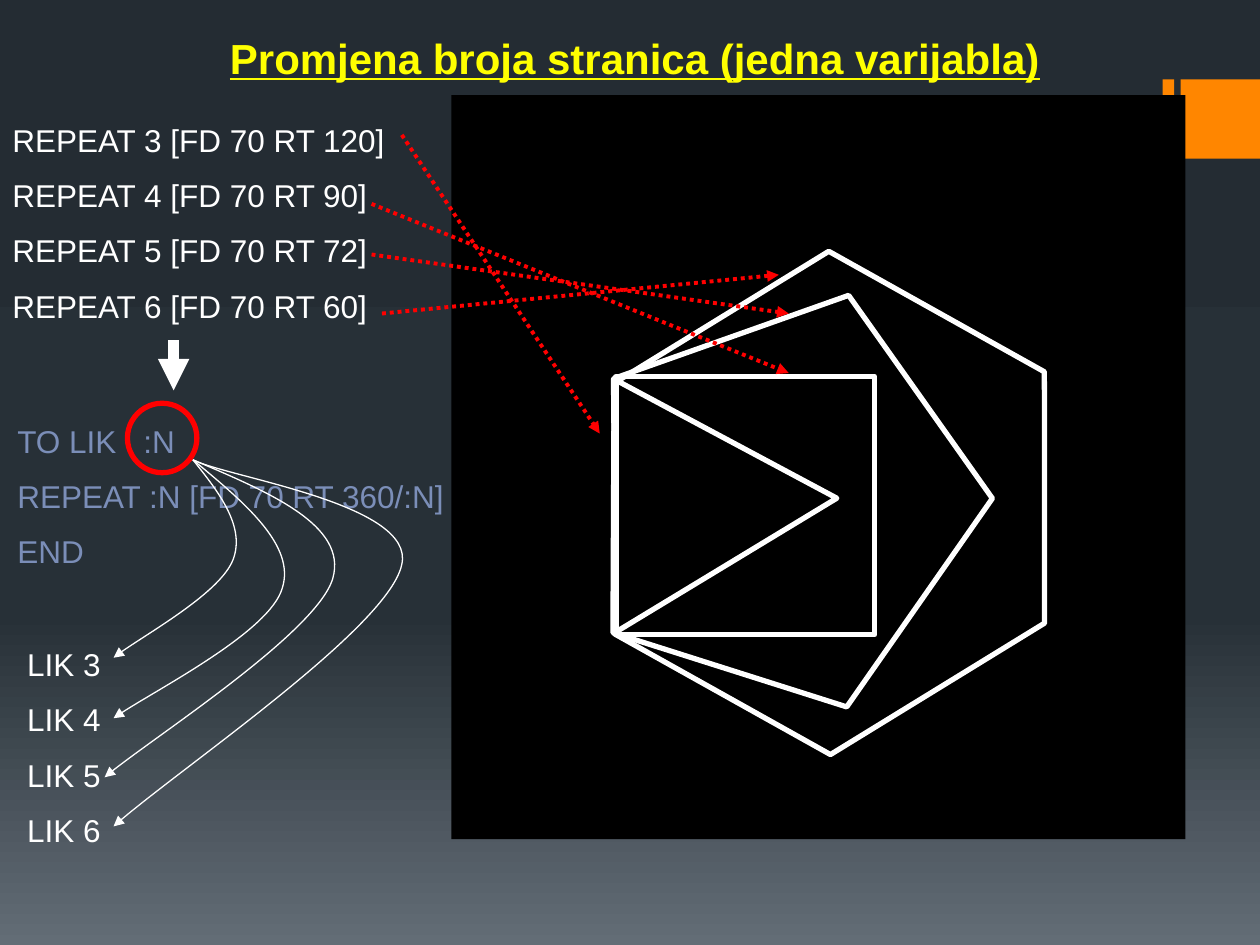
from copy import deepcopy
from dataclasses import dataclass

from lxml import etree
from pptx import Presentation
from pptx.dml.color import RGBColor
from pptx.enum.dml import MSO_LINE
from pptx.enum.shapes import MSO_CONNECTOR, MSO_SHAPE
from pptx.enum.text import MSO_AUTO_SIZE, PP_ALIGN
from pptx.oxml.ns import qn
from pptx.util import Cm, Pt

RECTANGLE = MSO_SHAPE.RECTANGLE
HEXAGON = MSO_SHAPE.HEXAGON
PENTAGON = MSO_SHAPE.REGULAR_PENTAGON
TRIANGLE = MSO_SHAPE.ISOSCELES_TRIANGLE
OVAL = MSO_SHAPE.OVAL
STRAIGHT = MSO_CONNECTOR.STRAIGHT
DOTTED = MSO_LINE.ROUND_DOT
CENTER = PP_ALIGN.CENTER
FIT_SHAPE = MSO_AUTO_SIZE.SHAPE_TO_FIT_TEXT


@dataclass(frozen=True)
class Theme:
    font: str = "Arial"
    title_size: int = 24
    code_size: int = 18
    gap: int = 10
    white: str = "FFFFFF"
    black: str = "000000"
    red: str = "FF0000"
    yellow: str = "FFFF00"
    orange: str = "FF8600"
    blue: str = "7B8EB8"
    background: tuple = ((0, "242C33"), (0.65, "273037"), (1, "636D76"))


THEME = Theme()


def color(value):
    return RGBColor.from_string(value)


def paint_background(page):
    fill = page.background.fill
    fill.gradient()
    fill.gradient_angle = 270
    stop_list = page._element.find(".//" + qn("a:gsLst"))
    stop_list.append(deepcopy(stop_list[-1]))
    for stop, (position, value) in zip(fill.gradient_stops, THEME.background):
        stop.position = position
        stop.color.rgb = color(value)


def style_line(line, value, width):
    line.color.rgb = color(value)
    line.width = Pt(width)


def add_arrowhead(shape):
    outline = shape.line._get_or_add_ln()
    etree.SubElement(outline, qn("a:tailEnd"), type="triangle")


def add_block(page, left, top, width, height, value):
    block = page.shapes.add_shape(RECTANGLE, Cm(left), Cm(top), Cm(width), Cm(height))
    block.shadow.inherit = False
    block.fill.solid()
    block.fill.fore_color.rgb = color(value)
    block.line.fill.background()


def add_outline(page, kind, left, top, width, height, value, rotation=0):
    shape = page.shapes.add_shape(kind, Cm(left), Cm(top), Cm(width), Cm(height))
    shape.shadow.inherit = False
    shape.fill.background()
    style_line(shape.line, value, 3)
    shape.rotation = rotation
    return shape


def add_text(page, left, top, width, height, lines, value, size=THEME.code_size,
             title=False, tab=None):
    box = page.shapes.add_textbox(Cm(left), Cm(top), Cm(width), Cm(height))
    frame = box.text_frame
    frame.word_wrap = True
    frame.auto_size = FIT_SHAPE
    for index, line in enumerate(lines):
        para = frame.add_paragraph() if index else frame.paragraphs[0]
        para.space_before = Pt(THEME.gap)
        if title:
            para.alignment = CENTER
        if tab and "\t" in line:
            tabs = etree.SubElement(para._p.get_or_add_pPr(), qn("a:tabLst"))
            etree.SubElement(tabs, qn("a:tab"), pos=str(Cm(tab)), algn="l")
        span = para.add_run()
        span.text = line
        span.font.name = THEME.font
        span.font.size = Pt(size)
        span.font.color.rgb = color(value)
        span.font.bold = title
        span.font.underline = title


def add_arrow(page, start, end, value, width, dash=None):
    points = [Cm(number) for number in (*start, *end)]
    arrow = page.shapes.add_connector(STRAIGHT, *points)
    style_line(arrow.line, value, width)
    if dash:
        arrow.line.dash_style = dash
    add_arrowhead(arrow)
    etree.SubElement(arrow._element.spPr, qn("a:effectLst"))


def add_curve(page, start, points):
    """Draw Bezier segments; every three points make one segment."""
    builder = page.shapes.build_freeform(Cm(start[0]), Cm(start[1]))
    builder.add_line_segments([(Cm(x), Cm(y)) for x, y in points], close=False)
    curve = builder.convert_to_shape()
    curve.shadow.inherit = False
    curve.fill.background()
    style_line(curve.line, THEME.white, 0.75)
    add_arrowhead(curve)
    outline = curve._element.find(".//" + qn("a:path"))
    segments = outline.findall(qn("a:lnTo"))
    for first in range(0, len(segments), 3):
        bezier = etree.SubElement(outline, qn("a:cubicBezTo"))
        for segment in segments[first:first + 3]:
            bezier.append(segment[0])
            outline.remove(segment)


def main():
    deck = Presentation()
    deck.slide_width, deck.slide_height = Cm(25.4), Cm(19.05)
    page = deck.slides.add_slide(deck.slide_layouts[6])
    paint_background(page)

    # Corner decoration and drawing panel
    add_block(page, 23.44, 1.6, 0.23, 1.6, THEME.orange)
    add_block(page, 23.8, 1.6, 1.6, 1.6, THEME.orange)
    add_block(page, 9.1, 1.92, 14.8, 15, THEME.black)

    # Nested polygons
    hexagon = add_outline(page, HEXAGON, 11.76, 5.72, 9.93, 8.84, THEME.white, 29.2)
    hexagon.adjustments[0] = 0.28
    add_outline(page, PENTAGON, 11.91, 5.77, 8, 7.92, THEME.white, 17.6)
    add_outline(page, RECTANGLE, 12.42, 7.59, 5.21, 5.21, THEME.white)
    add_outline(page, TRIANGLE, 10.9, 7.32, 5.21, 4.39, THEME.white, 328.8)

    # Procedure, commands and calls
    add_text(page, 0.1, 8.38, 9.2, 3.3,
             ["TO LIK\t:N", "REPEAT :N [FD 70 RT 360/:N]", "END"],
             THEME.blue, tab=2.54)
    sides = range(3, 7)
    add_text(page, 0, 2.31, 9.5, 4.47,
             [f"REPEAT {count} [FD 70 RT {360 // count}]" for count in sides],
             THEME.white)
    add_text(page, 0.3, 12.88, 3.3, 4.47,
             [f"LIK {count}" for count in sides], THEME.white)

    # Arrows from each command to its polygon
    for start, end in (
        ((8.1, 2.72), (12.09, 8.74)),
        ((7.49, 4.11), (15.9, 7.52)),
        ((7.49, 5.13), (15.9, 6.32)),
        ((7.7, 6.32), (15.7, 5.54)),
    ):
        add_arrow(page, start, end, THEME.red, 2.25, DOTTED)
    add_arrow(page, (3.5, 6.86), (3.5, 7.87), THEME.white, 6)

    # Marked variable and curves to the calls
    add_outline(page, OVAL, 2.57, 8.13, 1.4, 1.4, THEME.red)
    for points in (
        ((4.42, 9.93), (4.95, 10.62), (4.7, 11.28),
         (4.45, 11.94), (2.69, 12.93), (2.29, 13.26)),
        ((4.93, 10.13), (5.97, 11), (5.69, 11.86),
         (5.44, 12.73), (2.87, 14.05), (2.29, 14.48)),
        ((5.44, 9.93), (7.01, 10.59), (6.71, 11.66),
         (6.4, 12.73), (2.87, 15.01), (2.11, 15.67)),
        ((4.6, 9.63), (8.38, 10.16), (8.1, 11.38),
         (7.85, 12.62), (3.51, 15.57), (2.29, 16.66)),
    ):
        add_curve(page, (3.89, 9.27), points)

    # Title
    add_text(page, 1.7, 0.53, 22.2, 1.27,
             ["Promjena broja stranica (jedna varijabla)"],
             THEME.yellow, THEME.title_size, title=True)

    deck.save("out.pptx")


if __name__ == "__main__":
    main()
